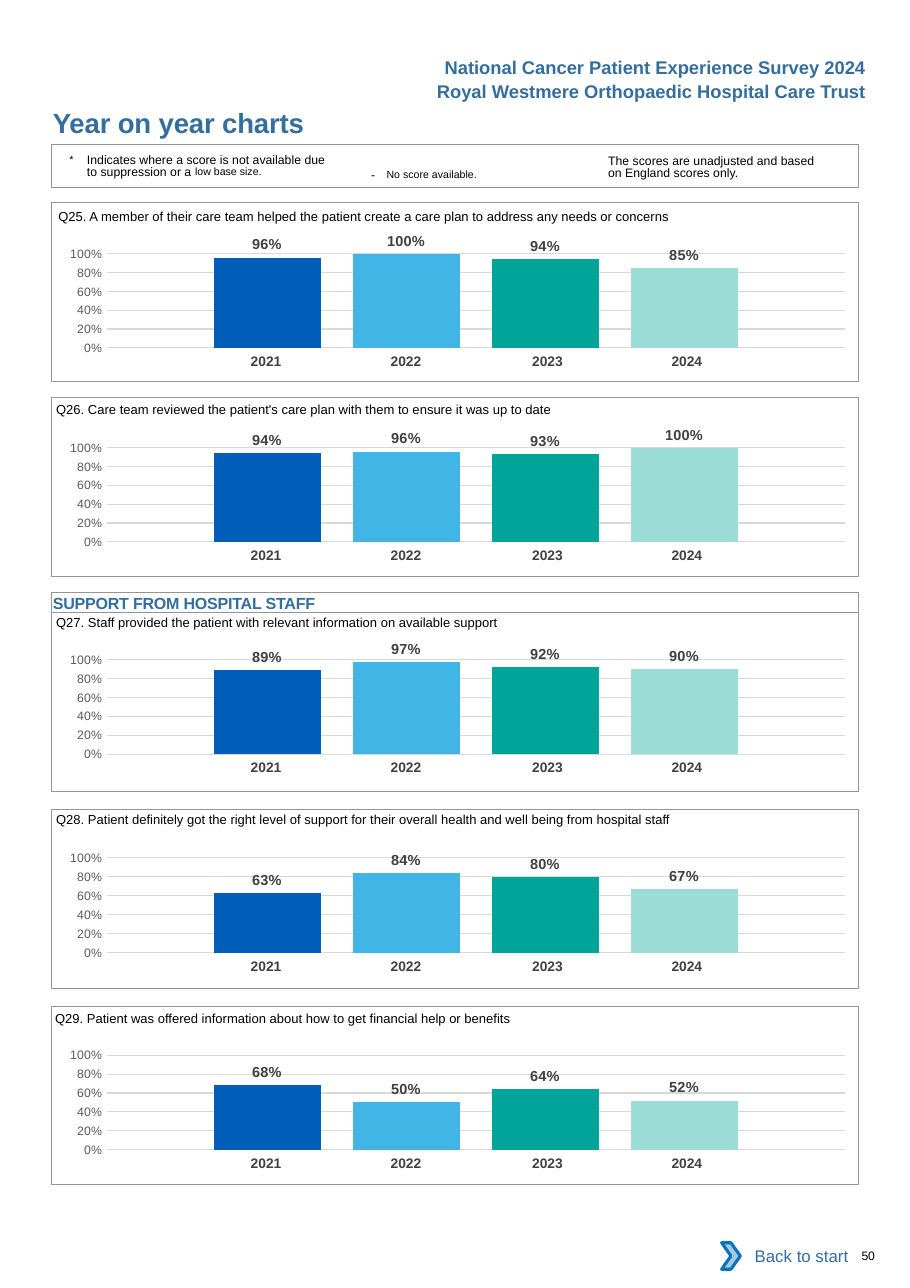
import pptx
import pptx.chart.data
import pptx.dml.color
import pptx.enum.chart
import pptx.enum.shapes
import pptx.enum.text
import pptx.util
from lxml import etree

HUES = {"blue": "336E9F", "grey": "939598", "black": "000000", "year": "414042",
        "tick": "595959", "grid": "D9D9D9", "label": "404040", "white": "FFFFFF",
        "arrow": "A8C7E9", "edge": "0A74BB"}
BARS = ["005EB8", "41B6E6", "00A499", "9CDCD7"]
YEARS = [("2021", 1.27, 0), ("2022", 1.27, 0), ("2023", 1.34, 0.04), ("2024", 1.27, 0.12)]
PLOT = {"x": 0.079, "y": 0.145, "w": 0.915, "h": 0.666}
PANELS = [
    (1.84, 2.11, (0.53, 1.8), "Q25. A member of their care team helped the patient create a care plan to address any needs or concerns", [0.96, 1, 0.94, 0.85]),
    (3.61, 3.87, (0.51, 3.55), "Q26. Care team reviewed the patient's care plan with them to ensure it was up to date", [0.94, 0.96, 0.93, 1]),
    (5.56, 5.8, (0.51, 5.49), "Q27. Staff provided the patient with relevant information on available support", [0.89, 0.97, 0.92, 0.9]),
    (7.35, 7.6, (0.51, 7.28), "Q28. Patient definitely got the right level of support for their overall health and well being from hospital staff", [0.63, 0.84, 0.8, 0.67]),
    (9.13, 9.39, (0.5, 9.08), "Q29. Patient was offered information about how to get financial help or benefits", [0.68, 0.5, 0.64, 0.52]),
]
HEADS = [(0.46, "National Cancer Patient Experience Survey 2024"),
         (0.68, "Royal Westmere Orthopaedic Hospital Care Trust")]
LEFT, WIDE, HIGH = 0.47, 7.32, 1.62

Inches, Pt = pptx.util.Inches, pptx.util.Pt
SHAPE = pptx.enum.shapes.MSO_SHAPE
RIGHT = pptx.enum.text.PP_ALIGN.RIGHT
MIDDLE = pptx.enum.text.MSO_ANCHOR.MIDDLE


def rgb(hue):
    return pptx.dml.color.RGBColor.from_string(HUES.get(hue, hue))


def apply(thing, looks):
    for name, value in looks.items():
        setattr(thing, name, value)


def style(font, size, hue, bold=False):
    apply(font, {"name": "Arial", "size": Pt(size), "bold": bold})
    font.color.rgb = rgb(hue)


def fill_text(frame, runs, pads=(0, 0, 0, 0), anchor=pptx.enum.text.MSO_ANCHOR.TOP, **para):
    sides = ("margin_left", "margin_top", "margin_right", "margin_bottom")
    apply(frame, dict(zip(sides, map(Inches, pads)), word_wrap=True, vertical_anchor=anchor))
    line = frame.paragraphs[0]
    apply(line, para)
    for words, size, hue, bold, extra in runs:
        run = line.add_run()
        run.text = words
        style(run.font, size, hue, bold)
        for name, value in extra.items():
            run.font._element.set(name, value)
    return line


def write(slide, place, runs, **looks):
    box = slide.shapes.add_textbox(*map(Inches, place))
    return fill_text(box.text_frame, runs, **looks)


def draw(slide, kind, place, fill=None, line=None, width=0.5):
    shape = slide.shapes.add_shape(kind, *map(Inches, place))
    shape.shadow.inherit = False
    if fill:
        shape.fill.solid()
        shape.fill.fore_color.rgb = rgb(fill)
    else:
        shape.fill.background()
    if line:
        shape.line.color.rgb = rgb(line)
        shape.line.width = Pt(width)
    else:
        shape.line.fill.background()
    return shape


def add_years(slide, top):
    total = sum(year[1] for year in YEARS)
    frame = slide.shapes.add_table(1, len(YEARS), *map(Inches, (1.73, top, total, 0.27)))
    table = frame.table
    apply(table, {"first_row": False, "horz_banding": False})
    table._tbl.tblPr[0].text = "{2D5ABB26-0587-4C30-8999-92F81FD0307C}"
    table.rows[0].height = Inches(0.27)
    for spot, (year, width, pad) in enumerate(YEARS):
        table.columns[spot].width = Inches(width)
        cell = table.cell(0, spot)
        cell.fill.background()
        apply(cell, {"margin_left": Inches(0.1), "margin_right": Inches(pad)})
        line = cell.text_frame.paragraphs[0]
        line.alignment = pptx.enum.text.PP_ALIGN.CENTER
        run = line.add_run()
        run.text = year
        style(run.font, 9, "year", True)


def set_plot(chart):
    area = chart._chartSpace.chart.plotArea
    for old in area.findall("{*}layout"):
        area.remove(old)
    space = "{http://schemas.openxmlformats.org/drawingml/2006/chart}"
    layout = etree.Element(space + "layout")
    manual = etree.SubElement(layout, space + "manualLayout")
    parts = {"layoutTarget": "inner", "xMode": "edge", "yMode": "edge", **PLOT}
    for name, value in parts.items():
        etree.SubElement(manual, space + name).set("val", str(value))
    area.insert(0, layout)


def add_bars(slide, top, scores):
    data = pptx.chart.data.CategoryChartData(number_format="0%")
    data.categories = ["1"]
    for count, score in enumerate(scores, 1):
        data.add_series(f"Series {count}", [score])
    kind = pptx.enum.chart.XL_CHART_TYPE.COLUMN_CLUSTERED
    chart = slide.shapes.add_chart(kind, *map(Inches, (0.39, top, WIDE, 1.29)), data).chart
    apply(chart, {"has_legend": False, "has_title": False})
    apply(chart.font, {"name": "Calibri", "size": Pt(10)})
    chart.font.color.rgb = rgb("black")
    chart.category_axis.visible = False
    axis = chart.value_axis
    mark = pptx.enum.chart.XL_TICK_MARK.NONE
    apply(axis, {"minimum_scale": 0, "maximum_scale": 1, "major_unit": 0.2,
                 "major_tick_mark": mark, "minor_tick_mark": mark, "has_major_gridlines": True})
    style(axis.tick_labels.font, 8, "tick")
    apply(axis.tick_labels, {"number_format": "0%", "number_format_is_linked": False})
    axis.format.line.fill.background()
    grid = axis.major_gridlines.format.line
    grid.color.rgb = rgb("grid")
    grid.width = Pt(0.75)
    plot = chart.plots[0]
    apply(plot, {"gap_width": 200, "overlap": -30, "vary_by_categories": False})
    for bar, hue in zip(plot.series, BARS):
        bar.format.fill.solid()
        bar.format.fill.fore_color.rgb = rgb(hue)
        labels = bar.data_labels
        apply(labels, {"show_value": True, "number_format": "0%", "number_format_is_linked": False,
                       "position": pptx.enum.chart.XL_LABEL_POSITION.OUTSIDE_END})
        style(labels.font, 9.5, "label", True)
    set_plot(chart)


def add_notes(slide):
    write(slide, (5.52, 1.38, 2.01, 0.27),
          [("The scores are unadjusted and based on England scores only.", 8, "black", False, {})],
          pads=(0, 0.03, 0, 0), line_spacing=Pt(8.1))
    write(slide, (3.27, 1.41, 1.83, 0.24),
          [("- ", 8, "black", False, {"spc": "260"}),
           ("No score available.", 12, "black", False, {"baseline": "3000"})],
          pads=(0.1, 0.05, 0.1, 0.05))
    line = write(slide, (0.63, 1.38, 2.4, 0.27),
                 [("*\t", 12, "black", False, {"baseline": "3000"}),
                  ("Indicates where a score is not available due to suppression or a ", 8, "black", False, {}),
                  ("low base size.", 12, "black", False, {"baseline": "7000"})],
                 pads=(0, 0.03, 0, 0), line_spacing=Pt(8.1))
    hang = Inches(0.16)
    for name, value in {"marL": hang, "indent": -hang}.items():
        line._p.get_or_add_pPr().set(name, str(value))
    draw(slide, SHAPE.RECTANGLE, (LEFT, 1.31, WIDE, 0.39), line="grey", width=0.75)


def main():
    deck = pptx.Presentation()
    apply(deck, {"slide_width": Inches(8.26), "slide_height": Inches(11.69)})
    slide = deck.slides.add_slide(deck.slide_layouts[6])
    write(slide, (0.48, 0.96, 4.5, 0.3), [("Year on year charts", 18, "blue", True, {"spc": "-10"})])
    for top, words in HEADS:
        write(slide, (3.46, top, 4.5, 0.3), [(words, 12, "blue", True, {})],
              pads=(0.1, 0.05, 0.1, 0.05), alignment=RIGHT)
    add_notes(slide)
    for top, chart, (left, head), words, scores in PANELS:
        add_years(slide, chart + 1.05)
        add_bars(slide, chart, scores)
        draw(slide, SHAPE.RECTANGLE, (LEFT, top, WIDE, HIGH), line="grey")
        write(slide, (left, head, 7.2, 0.24), [(words, 8.5, "black", False, {})], pads=(0, 0.09, 0, 0))
    band = draw(slide, SHAPE.RECTANGLE, (LEFT, 5.38, WIDE, 0.18), line="grey")
    fill_text(band.text_frame, [("SUPPORT FROM HOSPITAL STAFF", 10.5, "blue", True, {"spc": "-10"})],
              pads=(0.01, 0.01, 0, 0), alignment=pptx.enum.text.PP_ALIGN.LEFT)
    back = draw(slide, SHAPE.RECTANGLE, (6.62, 11.19, 1.18, 0.42), fill="white")
    fill_text(back.text_frame, [("Back to start", 11, "blue", False, {})],
              pads=(0.1, 0.05, 0.1, 0.05), anchor=MIDDLE, alignment=RIGHT)
    draw(slide, SHAPE.CHEVRON, (6.55, 11.28, 0.17, 0.24), fill="arrow", line="edge", width=2)
    write(slide, (7.82, 11.33, 0.41, 0.13), [("50", 8, "black", False, {"spc": "-20"})])
    deck.save("out.pptx")


if __name__ == "__main__":
    main()
